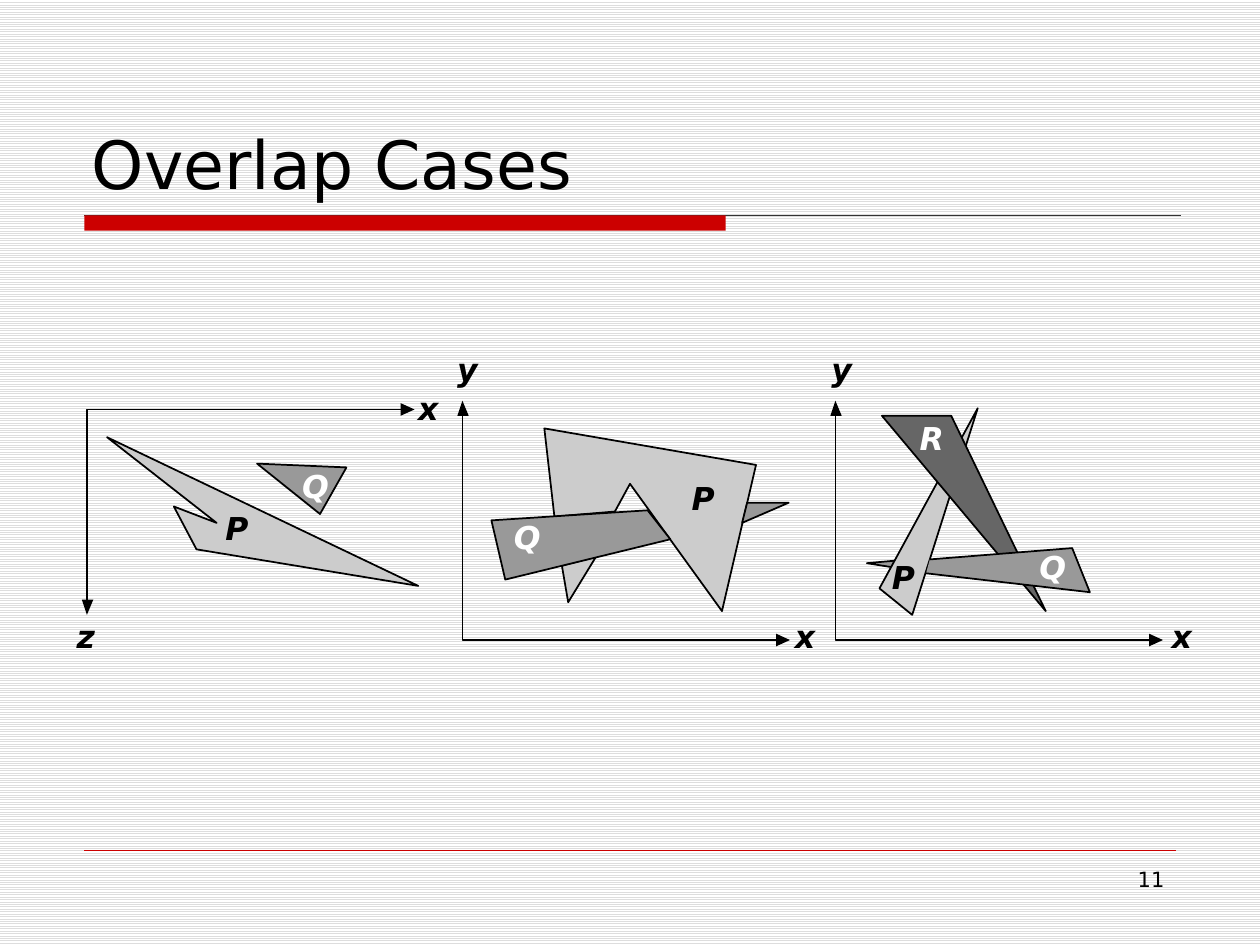
from lxml import etree
from pptx import Presentation
from pptx.dml.color import RGBColor
from pptx.enum import dml, shapes, text
from pptx.oxml.ns import qn
from pptx.util import Inches, Pt

FONT = "DejaVu Sans"
BLACK = RGBColor(0x00, 0x00, 0x00)
WHITE = RGBColor(0xFF, 0xFF, 0xFF)
RED = RGBColor(0xCC, 0x00, 0x00)
STRIPE = RGBColor(0xDD, 0xDD, 0xDD)
LIGHT = RGBColor(0xCC, 0xCC, 0xCC)
MEDIUM = RGBColor(0x99, 0x99, 0x99)
DARK = RGBColor(0x66, 0x66, 0x66)
RULE = RGBColor(0x33, 0x33, 0x33)
LETTER_WIDTHS = {"x": 0.37, "y": 0.36, "z": 0.35, "P": 0.39, "Q": 0.41, "R": 0.4}


def style_paragraph(paragraph, size, color=BLACK, bold=False, italic=False):
    """Set the font of a whole paragraph."""
    font = paragraph.font
    font.name, font.size = FONT, Pt(size)
    font.bold, font.italic = bold, italic
    font.color.rgb = color


def add_background(slide):
    """Fill the slide with thin horizontal stripes."""
    fill = slide.background.fill
    fill.patterned()
    fill.pattern = dml.MSO_PATTERN.LIGHT_HORIZONTAL
    fill.fore_color.rgb = STRIPE
    fill.back_color.rgb = WHITE


def add_title(slide, wording):
    """Place the slide title above its rule."""
    title = slide.shapes.title
    title.left, title.top = Inches(0.63), Inches(0.33)
    title.width, title.height = Inches(8.75), Inches(1.33)
    title.text_frame.text = wording
    title.text_frame.vertical_anchor = text.MSO_ANCHOR.BOTTOM
    heading = title.text_frame.paragraphs[0]
    heading.alignment = text.PP_ALIGN.LEFT
    style_paragraph(heading, 38)


def add_line(slide, start, end, color, width):
    """Draw a straight line."""
    points = [Inches(value) for value in (*start, *end)]
    line = slide.shapes.add_connector(shapes.MSO_CONNECTOR.STRAIGHT, *points)
    line.line.color.rgb = color
    line.line.width = Pt(width)
    etree.SubElement(line._element.spPr, qn("a:effectLst"))


def add_title_rule(slide):
    """Draw the thin rule and the red bar under the title."""
    add_line(slide, (0.67, 1.71), (9.37, 1.71), RULE, 0.75)
    bar = slide.shapes.add_shape(shapes.MSO_SHAPE.RECTANGLE, Inches(0.67),
                                 Inches(1.71), Inches(5.09), Inches(0.12))
    bar.shadow.inherit = False
    bar.fill.solid()
    bar.fill.fore_color.rgb = RED
    bar.line.fill.background()


def add_outline(slide, color, *corners, close=True, outlined=True):
    """Draw a path with a fill colour, or unfilled when the colour is None."""
    start, *others = [(Inches(x), Inches(y)) for x, y in corners]
    builder = slide.shapes.build_freeform(*start)
    builder.add_line_segments(others, close=close)
    outline = builder.convert_to_shape()
    outline.shadow.inherit = False
    if color is None:
        outline.fill.background()
    else:
        outline.fill.solid()
        outline.fill.fore_color.rgb = color
    if outlined:
        outline.line.color.rgb = BLACK
        outline.line.width = Pt(1)
    else:
        outline.line.fill.background()


def add_letter(slide, letter, left, top, color=BLACK):
    """Write the bold italic name of a polygon or an axis."""
    box = slide.shapes.add_textbox(Inches(left), Inches(top),
                                   Inches(LETTER_WIDTHS[letter]), Inches(0.4))
    box.text_frame.word_wrap = False
    box.text_frame.text = letter
    style_paragraph(box.text_frame.paragraphs[0], 18, color, bold=True, italic=True)


def add_axes(slide, origin, vertical_tip):
    """Draw a horizontal and a vertical axis from one origin, with arrowheads."""
    x, y = origin
    right_tip = x + 2.6
    back = 0.12 if vertical_tip < y else -0.12
    base = vertical_tip + back
    add_outline(slide, BLACK, (x - 0.04, base), (x + 0.05, base),
                (x, vertical_tip), outlined=False)
    add_outline(slide, BLACK, (right_tip - 0.11, y - 0.05),
                (right_tip - 0.11, y + 0.05), (right_tip, y), outlined=False)
    add_outline(slide, None, (x, base), origin, (right_tip - 0.09, y), close=False)


def add_separate_case(slide):
    """Draw P and Q apart in the x-z plane."""
    add_outline(slide, MEDIUM, (2.04, 3.68), (2.75, 3.71), (2.54, 4.08))
    add_outline(slide, LIGHT, (0.85, 3.47), (3.32, 4.65), (1.56, 4.36),
                (1.38, 4.02), (1.72, 4.15))
    add_axes(slide, (0.69, 3.25), 4.88)
    add_letter(slide, "x", 3.22, 3.04)
    add_letter(slide, "z", 0.51, 4.85)
    add_letter(slide, "P", 1.69, 3.99)
    add_letter(slide, "Q", 2.3, 3.66, WHITE)


def add_piercing_case(slide):
    """Draw Q passing in front of and behind P."""
    add_outline(slide, LIGHT, (4.4, 4.1), (4.32, 3.4), (6, 3.69),
                (5.73, 4.85), (5, 3.84), (4.88, 4.06))
    add_outline(slide, LIGHT, (4.73, 4.42), (4.51, 4.78), (4.46, 4.49))
    add_outline(slide, MEDIUM, (5.14, 4.05), (3.9, 4.13), (4.01, 4.6), (5.32, 4.28))
    add_outline(slide, MEDIUM, (5.93, 3.99), (6.26, 3.99), (5.89, 4.15))
    add_axes(slide, (3.67, 5.08), 3.18)
    add_letter(slide, "x", 6.21, 4.85)
    add_letter(slide, "y", 3.53, 2.73)
    add_letter(slide, "P", 5.39, 3.75)
    add_letter(slide, "Q", 3.98, 4.06, WHITE)


def add_cyclic_case(slide):
    """Draw P, Q and R overlapping in a cycle."""
    add_outline(slide, MEDIUM, (7.07, 4.5), (6.88, 4.47), (7.1, 4.45), close=False)
    add_outline(slide, LIGHT, (6.98, 4.67), (7.76, 3.24), (7.24, 4.88))
    add_outline(slide, DARK, (7, 3.3), (7.55, 3.3), (8.3, 4.85))
    add_outline(slide, MEDIUM, (7.38, 4.44), (8.51, 4.35), (8.65, 4.7),
                (7.35, 4.55), close=False)
    add_axes(slide, (6.63, 5.08), 3.18)
    add_letter(slide, "x", 9.2, 4.85)
    add_letter(slide, "y", 6.5, 2.73)
    add_letter(slide, "P", 6.98, 4.38)
    add_letter(slide, "Q", 8.15, 4.3, WHITE)
    add_letter(slide, "R", 7.2, 3.28, WHITE)


def add_page_number(slide, number):
    """Write the page number at the lower right."""
    box = slide.shapes.add_textbox(Inches(7.17), Inches(6.83),
                                   Inches(2.17), Inches(0.52))
    box.text_frame.word_wrap = True
    box.text_frame.text = number
    page = box.text_frame.paragraphs[0]
    page.alignment = text.PP_ALIGN.RIGHT
    style_paragraph(page, 12)


def main():
    """Build the slide and save it."""
    deck = Presentation()
    deck.slide_width, deck.slide_height = Inches(10), Inches(7.5)
    slide = deck.slides.add_slide(deck.slide_layouts[5])
    add_background(slide)
    add_title(slide, "Overlap Cases")
    add_title_rule(slide)
    add_line(slide, (0.67, 6.75), (9.33, 6.75), RED, 0.25)
    add_separate_case(slide)
    add_piercing_case(slide)
    add_cyclic_case(slide)
    add_page_number(slide, "11")
    deck.save("out.pptx")


if __name__ == "__main__":
    main()
